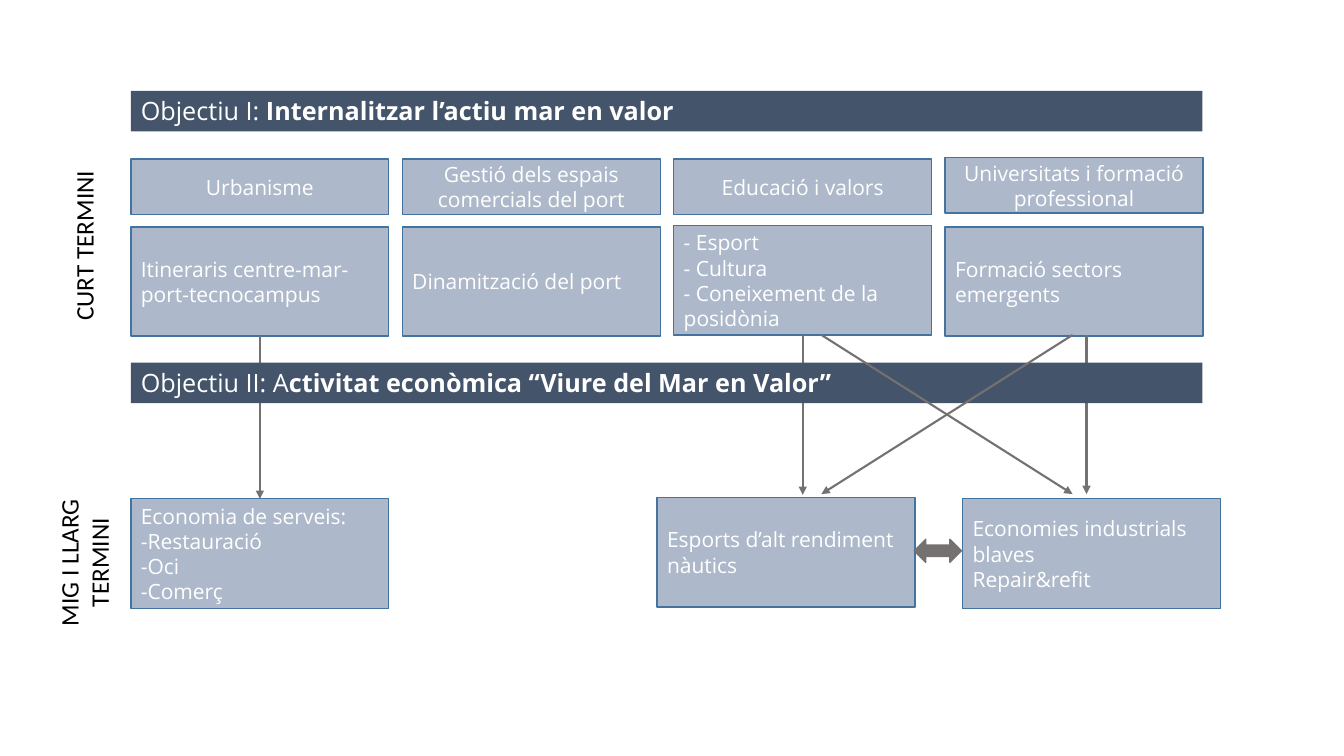
"""Build the slide on the two objectives for the sea and the port."""
from lxml.etree import SubElement
from pptx import Presentation
from pptx.dml.color import RGBColor
from pptx.enum.shapes import MSO_CONNECTOR as Link, MSO_SHAPE as Form
from pptx.enum.text import MSO_ANCHOR as Anchor, MSO_AUTO_SIZE as Fit, PP_ALIGN as Align
from pptx.oxml.ns import qn
from pptx.util import Cm, Pt

NAVY, PALE, EDGE, GREY = "44546A", "ADB9CA", "43739E", "767171"
WHITE, BLACK = "FFFFFF", "000000"
LEFT, STEP, WIDE = 3.3, 6.84, 6.5

BARS = [
    (2.29, "Objectiu I: ", "Internalitzar l’actiu mar en valor"),
    (9.14, "Objectiu II: A", "ctivitat econòmica “Viure del Mar en Valor”"),
]
COLUMNS = [
    ("Urbanisme", 4.01, ["Itineraris centre-mar-port-tecnocampus"], 5.72),
    ("Gestió dels espais comercials del port", 4.01, ["Dinamització del port"], 5.72),
    ("Educació i valors", 4.01,
     ["- Esport", "- Cultura", "- Coneixement de la posidònia"], 5.69),
    ("Universitats i formació professional", 3.97, ["Formació sectors emergents"], 5.72),
]
RESULTS = [
    (LEFT, 12.57, ["Economia de serveis:", "-Restauració", "-Oci", "-Comerç"]),
    (16.56, 12.53, ["Esports d’alt rendiment nàutics"]),
    (24.26, 12.57, ["Economies industrials blaves", "Repair&refit"]),
]
TERMS = [
    (-0.05, 5.66, 4.32, 1.02, "CURT TERMINI", False),
    (-0.33, 13.28, 4.9, 1.8, "MIG I LLARG TERMINI", True),
]
CROSS = [(27.03, 20.7), (20.7, 27.03)]


def tint(code):
    return RGBColor.from_string(code)


def write(shape, lines, bold="", size=15, font="Open Sans", color=WHITE,
          align=Align.LEFT, anchor=Anchor.MIDDLE, wrap=True, fit=Fit.NONE):
    frame = shape.text_frame
    frame.word_wrap, frame.auto_size = wrap, fit
    frame.vertical_anchor = anchor
    for i, line in enumerate(lines):
        para = frame.add_paragraph() if i else frame.paragraphs[0]
        para.alignment = align
        para.font.size, para.font.name = Pt(size), font
        para.font.color.rgb = tint(color)
        para.add_run().text = line
    if bold:
        run = para.add_run()
        run.text, run.font.bold = bold, True
    for para in frame.paragraphs:
        for run in para.runs:
            run.font.size, run.font.name = Pt(size), font
            run.font.color.rgb = tint(color)


def draw(shapes, x, y, w, h, fill=PALE, line=EDGE, form=Form.RECTANGLE):
    shape = shapes.add_shape(form, Cm(x), Cm(y), Cm(w), Cm(h))
    shape.shadow.inherit = False
    shape.fill.solid()
    shape.fill.fore_color.rgb = tint(fill)
    if line:
        shape.line.color.rgb = tint(line)
        shape.line.width = Pt(1)
    else:
        shape.line.fill.background()
    return shape


def arrow(shapes, x1, y1, x2, y2):
    link = shapes.add_connector(Link.STRAIGHT, Cm(x1), Cm(y1), Cm(x2), Cm(y2))
    link.line.color.rgb = tint(GREY)
    link.line.width = Pt(1.5)
    SubElement(link.line._get_or_add_ln(), qn("a:tailEnd"), type="triangle")
    SubElement(link._element.spPr, qn("a:effectLst"))
    return link


def main():
    deck = Presentation()
    deck.slide_width, deck.slide_height = Cm(33.87), Cm(19.05)
    shapes = deck.slides.add_slide(deck.slide_layouts[6]).shapes

    cards = []
    for i, (head, top, lines, low) in enumerate(COLUMNS):
        x = LEFT + i * STEP
        write(draw(shapes, x, top, WIDE, 1.4), [head], align=Align.CENTER)
        cards.append(draw(shapes, x, low, WIDE, 2.75))
        write(cards[-1], lines)
    goals = []
    for x, y, lines in RESULTS:
        goals.append(draw(shapes, x, y, WIDE, 2.77))
        write(goals[-1], lines)

    mid = LEFT + WIDE / 2
    down = arrow(shapes, mid, 8.47, mid, 12.57)
    down.begin_connect(cards[0], 2)
    down.end_connect(goals[0], 0)
    x = mid + 2 * STEP
    arrow(shapes, x, 8.44, x, 12.47).begin_connect(cards[2], 2)
    arrow(shapes, 27.38, 8.44, 27.38, 12.45)

    for y, lead, bold in BARS:
        bar = draw(shapes, LEFT, y, 27, 1.02, fill=NAVY, line=None)
        write(bar, [lead], bold=bold, size=18, anchor=Anchor.TOP, fit=Fit.SHAPE_TO_FIT_TEXT)

    draw(shapes, 23.04, 13.59, 1.19, 0.58, GREY, GREY, Form.LEFT_RIGHT_ARROW)
    for x, y, w, h, term, wrap in TERMS:
        box = shapes.add_textbox(Cm(x), Cm(y), Cm(w), Cm(h))
        box.rotation = 270
        write(box, [term], size=18, font="Calibri", color=BLACK, wrap=wrap,
              align=Align.CENTER if wrap else Align.LEFT,
              anchor=Anchor.TOP, fit=Fit.SHAPE_TO_FIT_TEXT)
    for start, end in CROSS:
        arrow(shapes, start, 8.44, end, 12.45)

    deck.save("out.pptx")


if __name__ == "__main__":
    main()
